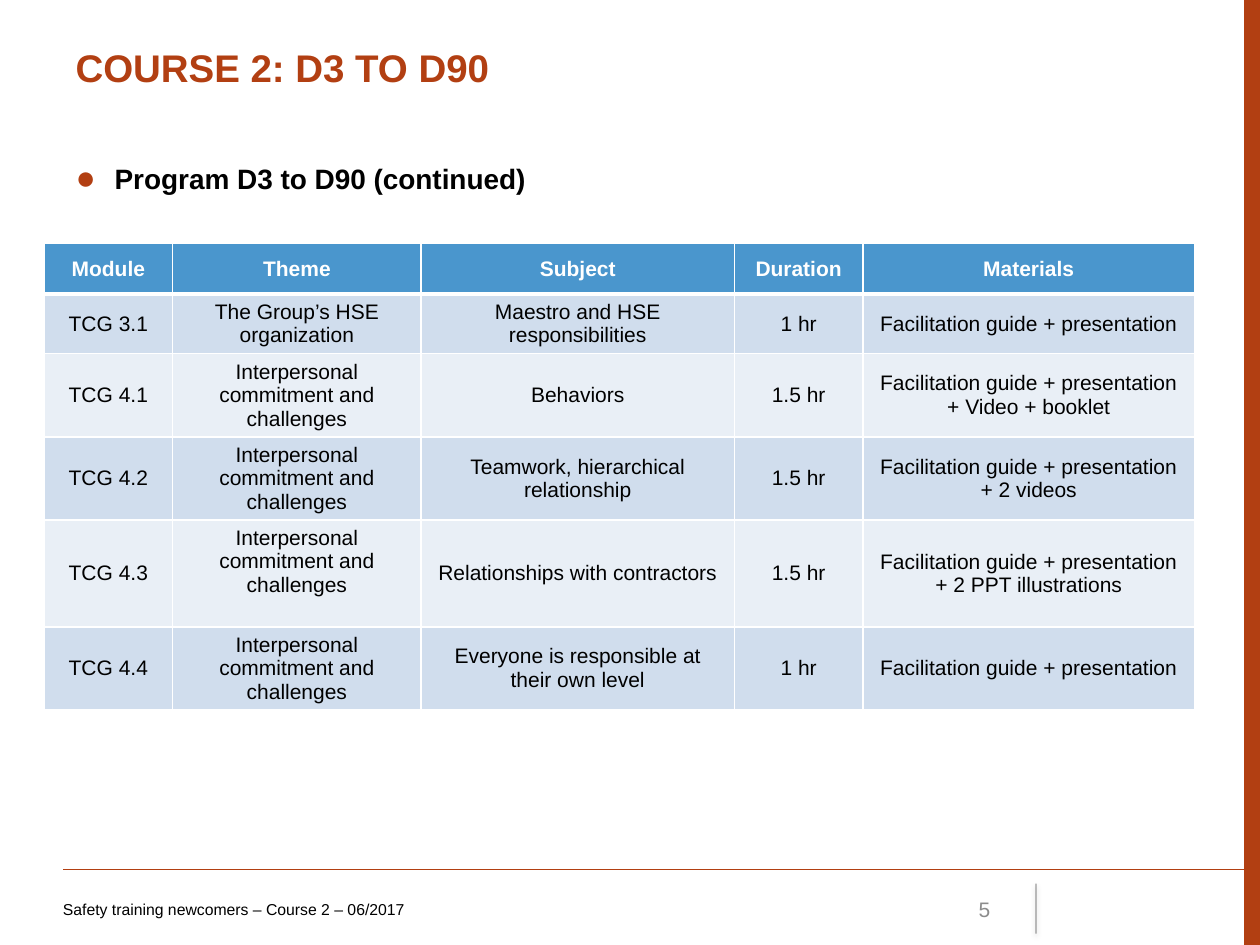
import pptx
import pptx.util
import pptx.oxml
import pptx.dml.color
import pptx.enum.shapes
import pptx.enum.text
from lxml import etree

Pt = pptx.util.Pt
RGB = pptx.dml.color.RGBColor
ALIGN = pptx.enum.text.PP_ALIGN
ANCHOR = pptx.enum.text.MSO_ANCHOR
NS = 'xmlns:a="http://schemas.openxmlformats.org/drawingml/2006/main"'

# Content
TITLE = "COURSE 2: D3 TO D90"
POINT = "Program D3 to D90 (continued)"
FOOTER = "Safety training newcomers – Course 2 – 06/2017"
PAGE = "5"
THEME = "Interpersonal commitment and challenges"
GUIDE = "Facilitation guide + presentation"
ROWS = [
    ("Module", "Theme", "Subject", "Duration", "Materials"),
    ("TCG 3.1", "The Group’s HSE organization",
     "Maestro and HSE responsibilities", "1 hr", GUIDE),
    ("TCG 4.1", THEME, "Behaviors", "1.5 hr", GUIDE + " + Video + booklet"),
    ("TCG 4.2", THEME, "Teamwork, hierarchical relationship", "1.5 hr",
     GUIDE + " + 2 videos"),
    ("TCG 4.3", THEME, "Relationships with contractors", "1.5 hr",
     GUIDE + " + 2 PPT illustrations"),
    ("TCG 4.4", THEME, "Everyone is responsible at their own level", "1 hr",
     GUIDE),
]
WIDTHS = [73.5, 142, 179, 73.5, 189.5]
HEIGHTS = [29, 34, 47.5, 47.5, 61, 47.5]
TOP_CELL = (4, 1)  # the one cell set at the top of its row

# Colours
RUST = RGB(0xB2, 0x3F, 0x12)
BLACK = RGB(0, 0, 0)
WHITE = RGB(255, 255, 255)
GREY = RGB(0x8C, 0x8C, 0x8C)
HEAD = RGB(0x4A, 0x96, 0xCD)
BANDS = [RGB(0xE9, 0xEF, 0xF6), RGB(0xD0, 0xDD, 0xED)]


def style(para, size, color, bold=False, align=ALIGN.LEFT):
    para.alignment = align
    font = para.font
    font.name, font.size, font.bold = "Arial", Pt(size), bold
    font.color.rgb = color


def place(shape, left, top, width, height):
    shape.left, shape.top = Pt(left), Pt(top)
    shape.width, shape.height = Pt(width), Pt(height)


def fill_box(shape, text, anchor):
    frame = shape.text_frame
    frame.text = text
    frame.word_wrap = True
    frame.auto_size = pptx.enum.text.MSO_AUTO_SIZE.NONE
    frame.vertical_anchor = anchor
    return frame.paragraphs[0]


def add_text(slide, text, box):
    shape = slide.shapes.add_textbox(*[Pt(n) for n in box])
    return shape, fill_box(shape, text, ANCHOR.MIDDLE)


def add_line(slide, start, end, color, width, effect=""):
    line = slide.shapes.add_connector(
        pptx.enum.shapes.MSO_CONNECTOR.STRAIGHT,
        *[Pt(n) for n in start + end])
    line.line.color.rgb = color
    line.line.width = Pt(width)
    props = line._element.spPr
    props.append(pptx.oxml.parse_xml(
        f"<a:effectLst {NS}>{effect}</a:effectLst>"))
    return props


def add_borders(cell, row):
    props = cell._tc.get_or_add_tcPr()
    sizes = {"L": 1, "R": 1, "T": 3 if row == 1 else 1,
             "B": 3 if row == 0 else 1}
    for i, (side, size) in enumerate(sizes.items()):
        props.insert(i, pptx.oxml.parse_xml(
            f'<a:ln{side} {NS} w="{Pt(size)}"><a:solidFill>'
            f'<a:srgbClr val="{WHITE}"/></a:solidFill></a:ln{side}>'))


def add_grid(slide):
    table = slide.shapes.add_table(
        len(ROWS), len(WIDTHS), Pt(25.2), Pt(139),
        Pt(sum(WIDTHS)), Pt(sum(HEIGHTS))).table
    for col, width in zip(table.columns, WIDTHS):
        col.width = Pt(width)
    for r, (row, height) in enumerate(zip(ROWS, HEIGHTS)):
        table.rows[r].height = Pt(height)
        for c, text in enumerate(row):
            cell = table.cell(r, c)
            cell.text = text
            cell.vertical_anchor = (
                ANCHOR.TOP if (r, c) == TOP_CELL else ANCHOR.MIDDLE)
            cell.fill.solid()
            cell.fill.fore_color.rgb = BANDS[r % 2] if r else HEAD
            add_borders(cell, r)
            style(cell.text_frame.paragraphs[0], 12,
                  BLACK if r else WHITE, r == 0, ALIGN.CENTER)


def main():
    deck = pptx.Presentation()
    deck.slide_width, deck.slide_height = Pt(720), Pt(540)
    slide = deck.slides.add_slide(deck.slide_layouts[1])

    # Side bar and rules
    bar = slide.shapes.add_shape(
        pptx.enum.shapes.MSO_SHAPE.RECTANGLE,
        Pt(711), Pt(0), Pt(9), Pt(540))
    bar.shadow.inherit = False
    bar.fill.solid()
    bar.fill.fore_color.rgb = RUST
    bar.line.fill.background()
    add_line(slide, (36, 497), (720, 497), RUST, 0.75)
    shade = (f'<a:outerShdw blurRad="{Pt(3.1)}" dist="{Pt(1.6)}" '
             'dir="5400000"><a:srgbClr val="000000">'
             '<a:alpha val="38000"/></a:srgbClr></a:outerShdw>')
    props = add_line(slide, (592, 505), (592, 533.5), BLACK, 0.5, shade)
    for color in props.findall(".//{*}ln//{*}srgbClr"):
        etree.SubElement(color, color.tag.replace("srgbClr", "alpha"),
                         val="70000")

    # Title
    title = slide.shapes.title
    place(title, 36, 21.6, 647.3, 49.7)
    style(fill_box(title, TITLE, ANCHOR.TOP), 22, RUST, True)

    # Bullet
    body = slide.placeholders[1]
    place(body, 36, 88.6, 647.3, 33.8)
    para = fill_box(body, POINT, ANCHOR.TOP)
    props = para._p.get_or_add_pPr()
    props.set("marL", str(Pt(22.3)))
    props.set("indent", str(-Pt(22.3)))
    for mark in (f'<a:buClr {NS}><a:srgbClr val="{RUST}"/></a:buClr>',
                 f'<a:buSzPct {NS} val="120000"/>',
                 f'<a:buFont {NS} typeface="Arial"/>',
                 f'<a:buChar {NS} char="●"/>'):
        props.append(pptx.oxml.parse_xml(mark))
    para.space_before, para.space_after = Pt(0), Pt(3)
    style(para, 16, BLACK, True)

    # Table
    add_grid(slide)

    # Footer
    foot, para = add_text(slide, FOOTER, (36, 505, 438, 28.8))
    foot.text_frame.margin_left = Pt(0)
    style(para, 9, BLACK)
    para = add_text(slide, PAGE, (516, 505, 57, 28.8))[1]
    style(para, 12, GREY, align=ALIGN.RIGHT)

    deck.save("out.pptx")


if __name__ == "__main__":
    main()
